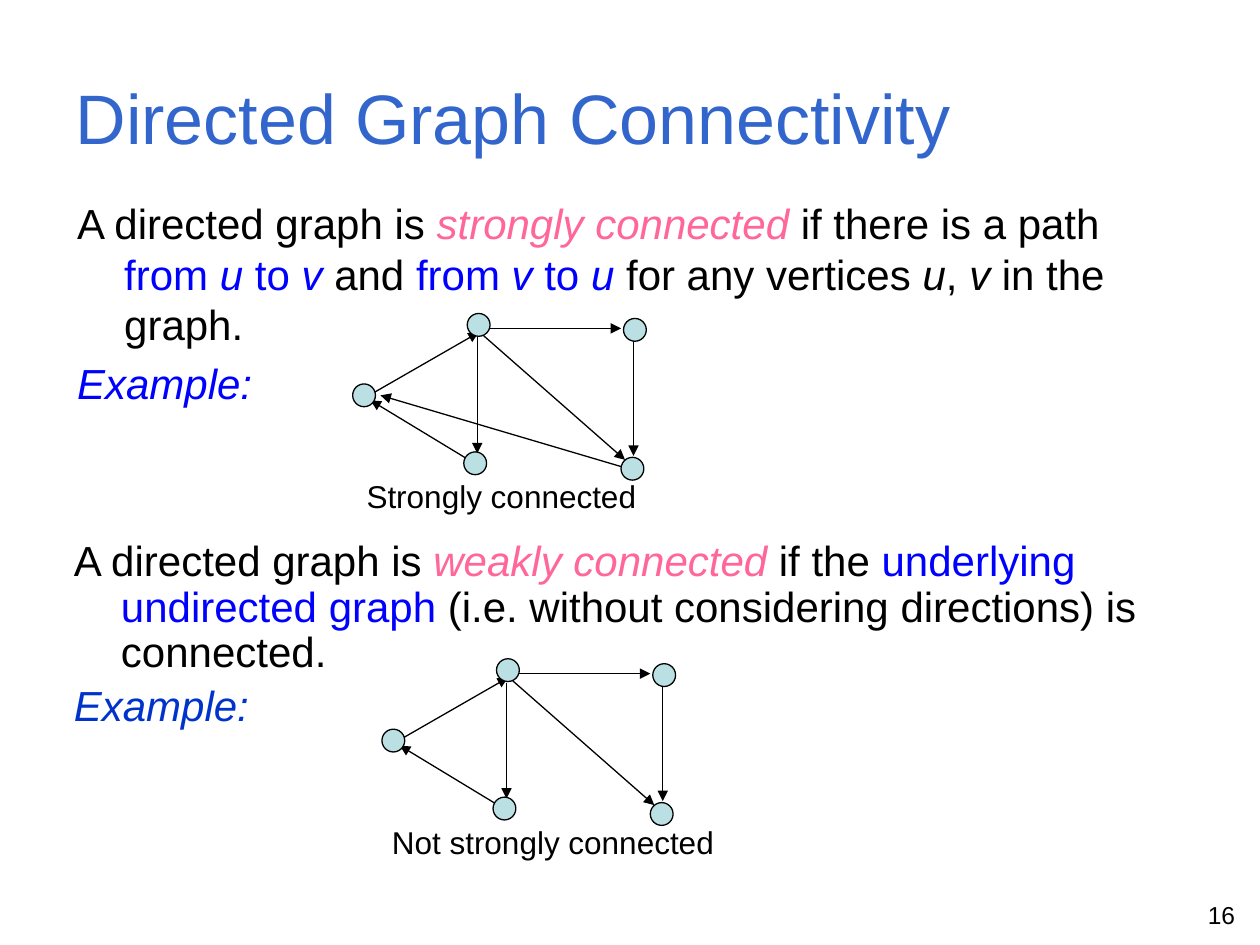
from pptx import Presentation
from pptx.dml.color import RGBColor
from pptx.enum.shapes import MSO_CONNECTOR as Connector, MSO_SHAPE as Preset
from pptx.enum.text import MSO_ANCHOR as Anchor, MSO_AUTO_SIZE as AutoSize, PP_ALIGN as Align
from pptx.oxml.ns import qn
from pptx.util import Cm, Pt
from lxml import etree

FONT = "Arial"
BLACK = RGBColor(0x00, 0x00, 0x00)
TITLE_BLUE = RGBColor(0x33, 0x66, 0xCC)
BLUE = RGBColor(0x00, 0x00, 0xFF)
DEEP_BLUE = RGBColor(0x00, 0x33, 0xCC)
PINK = RGBColor(0xFF, 0x66, 0x99)
NODE_FILL = RGBColor(0xBB, 0xE0, 0xE3)

# Graph geometry in cm, relative to the top left corner of the graph
NODE_SIZE = 0.46
NODES = [(2.31, 0), (0, 1.42), (2.24, 2.79), (5.41, 2.9), (5.46, 0.1)]
WEAK_EDGES = [
    ((0.33, 1.65), (2.54, 0.38)),   # left to top
    ((2.29, 2.92), (0.36, 1.75)),   # bottom to left
    ((2.54, 0.36), (5.49, 2.95)),   # top to bottom right
    ((2.69, 0.3), (5.41, 0.3)),     # top to top right
    ((2.51, 0.48), (2.51, 2.82)),   # top to bottom
    ((5.66, 0.41), (5.66, 2.87)),   # top right to bottom right
]
RETURN_EDGE = ((5.46, 3.1), (0.56, 1.65))   # bottom right to left

# Each run is (text, colour, italic)
STRONG_DEFINITION = [
    [("A directed graph is ", BLACK, False), ("strongly connected", PINK, True),
     (" if there is a path ", BLACK, False),
     ("from ", BLUE, False), ("u", BLUE, True), (" to ", BLUE, False), ("v", BLUE, True),
     (" and ", BLACK, False),
     ("from ", BLUE, False), ("v", BLUE, True), (" to ", BLUE, False), ("u", BLUE, True),
     (" for any vertices ", BLACK, False), ("u", BLACK, True), (", ", BLACK, False),
     ("v", BLACK, True), (" in the graph.", BLACK, False)],
    [("Example:", BLUE, True)],
]
WEAK_DEFINITION = [
    [("A directed graph is ", BLACK, False), ("weakly connected", PINK, True),
     (" if the ", BLACK, False), ("underlying undirected graph", BLUE, False),
     (" (i.e. without considering directions) is connected.", BLACK, False)],
    [("Example:", DEEP_BLUE, True)],
]


def place(shape, box):
    shape.left, shape.top, shape.width, shape.height = (Cm(value) for value in box)


def add_run(paragraph, text, size, colour=BLACK, italic=False):
    run = paragraph.add_run()
    run.text = text
    run.font.name = FONT
    run.font.size = Pt(size)
    run.font.italic = italic
    run.font.color.rgb = colour


def add_line_of_text(shapes, box, text, size, alignment):
    text_box = shapes.add_textbox(*(Cm(value) for value in box))
    text_box.text_frame.word_wrap = True
    paragraph = text_box.text_frame.paragraphs[0]
    paragraph.alignment = alignment
    add_run(paragraph, text, size)


def fill_title(title, box, text):
    place(title, box)
    title.text_frame.vertical_anchor = Anchor.MIDDLE
    title.text_frame.auto_size = AutoSize.NONE
    paragraph = title.text_frame.paragraphs[0]
    paragraph.alignment = Align.LEFT
    add_run(paragraph, text, 40, TITLE_BLUE)


def fill_definition(shape, box, paragraphs, line_spacing):
    place(shape, box)
    frame = shape.text_frame
    frame.word_wrap = True
    frame.auto_size = AutoSize.NONE
    for index, runs in enumerate(paragraphs):
        paragraph = frame.add_paragraph() if index else frame.paragraphs[0]
        paragraph.line_spacing = line_spacing
        paragraph.space_before = Pt(4.8)
        # Hanging indent without a bullet
        properties = paragraph._p.get_or_add_pPr()
        properties.set("marL", str(Cm(0.95)))
        properties.set("indent", str(-Cm(0.95)))
        etree.SubElement(properties, qn("a:buNone"))
        for text, colour, italic in runs:
            add_run(paragraph, text, 24, colour, italic)


def add_arrow(shapes, start, end):
    arrow = shapes.add_connector(Connector.STRAIGHT, *(Cm(value) for value in start + end))
    arrow.line.color.rgb = BLACK
    arrow.line.width = Pt(0.75)
    etree.SubElement(arrow.line._get_or_add_ln(), qn("a:tailEnd"), type="triangle")
    etree.SubElement(arrow._element.spPr, qn("a:effectLst"))


def add_graph(slide, left, top, edges, caption, caption_offset, caption_width):
    shapes = slide.shapes.add_group_shape().shapes
    # Edges
    for (x1, y1), (x2, y2) in edges:
        add_arrow(shapes, (left + x1, top + y1), (left + x2, top + y2))
    # Vertices
    for x, y in NODES:
        node = shapes.add_shape(Preset.OVAL, Cm(left + x), Cm(top + y),
                                Cm(NODE_SIZE), Cm(NODE_SIZE))
        node.shadow.inherit = False
        node.fill.solid()
        node.fill.fore_color.rgb = NODE_FILL
        node.line.color.rgb = BLACK
        node.line.width = Pt(0.75)
    # Caption
    caption_box = (left + caption_offset, top + 3.18, caption_width, 1.02)
    add_line_of_text(shapes, caption_box, caption, 18, Align.LEFT)


def main():
    presentation = Presentation()
    presentation.slide_width, presentation.slide_height = Cm(25.4), Cm(19.05)
    slide = presentation.slides.add_slide(presentation.slide_layouts[1])

    fill_title(slide.shapes.title, (1.27, 0.76, 22.86, 3.18), "Directed Graph Connectivity")

    # Strong connectivity
    fill_definition(slide.placeholders[1], (1.3, 3.86, 22.86, 4.8), STRONG_DEFINITION, 1.0)
    add_graph(slide, 7.11, 6.32, WEAK_EDGES + [RETURN_EDGE], "Strongly connected", 0.03, 6.2)

    # Weak connectivity
    add_graph(slide, 7.7, 13.28, WEAK_EDGES, "Not strongly connected", -0.05, 7.01)
    weak_box = slide.shapes.add_textbox(0, 0, 0, 0)
    fill_definition(weak_box, (1.24, 10.77, 22.86, 4.67), WEAK_DEFINITION, 0.9)

    # Page number
    add_line_of_text(slide.shapes, (19.23, 18.01, 5.92, 0.79), "16", 14, Align.RIGHT)

    presentation.save("out.pptx")


if __name__ == "__main__":
    main()
